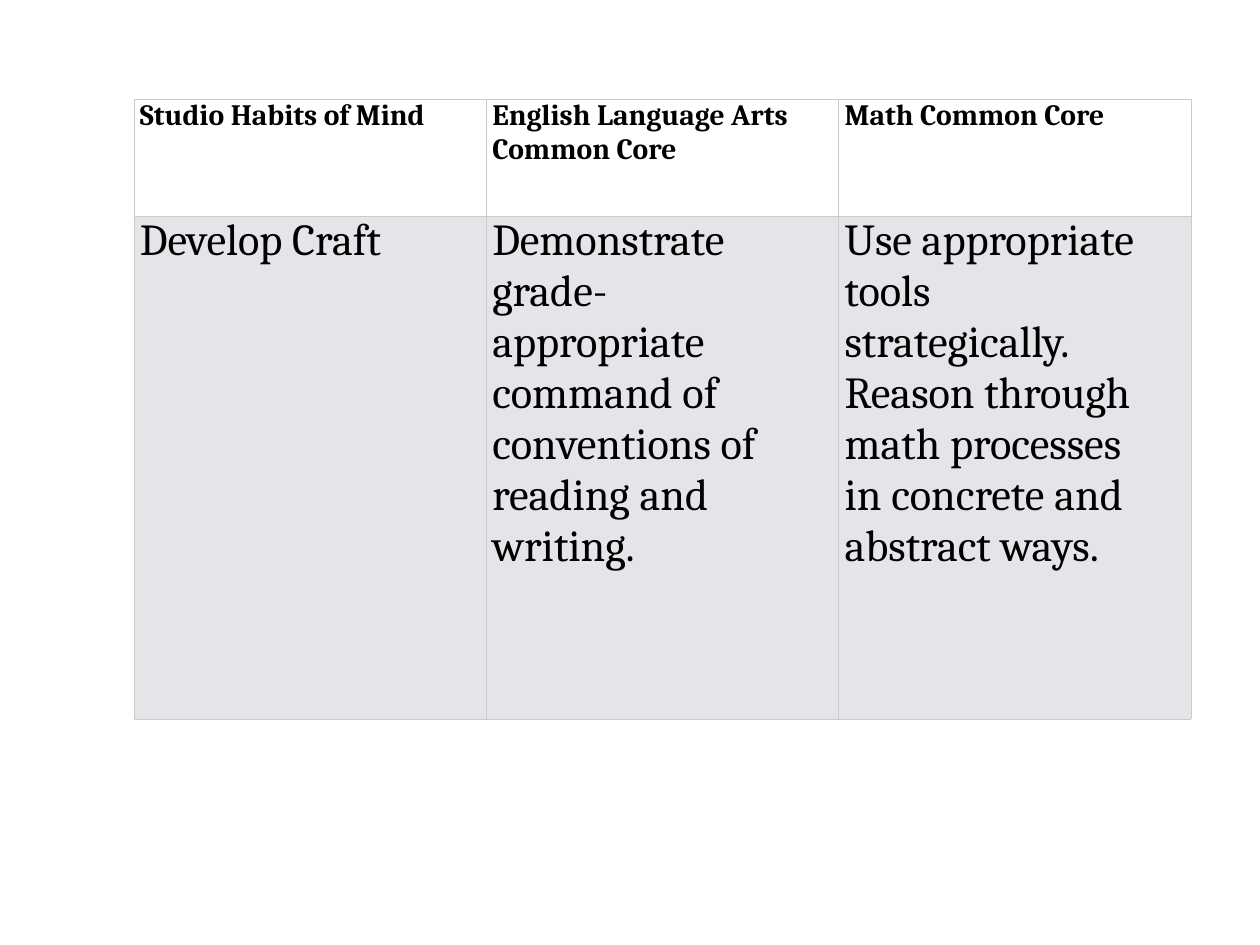
from lxml import etree
from pptx import Presentation
from pptx.dml.color import RGBColor
from pptx.oxml import ns
from pptx.util import Inches, Pt

BLACK = RGBColor(0x00, 0x00, 0x00)
WHITE = RGBColor(0xFF, 0xFF, 0xFF)
PALE_GRAY = RGBColor(0xE3, 0xE5, 0xE8)
BORDER_GRAY = RGBColor(0xCB, 0xCB, 0xCB)

headings = ["Studio Habits of Mind", "English Language Arts Common Core", "Math Common Core"]
standards = [
    "Develop Craft",
    "Demonstrate grade-appropriate command of conventions of reading and writing.",
    "Use appropriate tools strategically. Reason through math processes "
    "in concrete and abstract ways.",
]
# Each row: texts, height, right margin, font size, bold, fill
rows = [
    (headings, 1.32, 0.07, 24, True, WHITE),
    (standards, 5.68, 0.35, 36, False, PALE_GRAY),
]
table_width = 11.93


def add_borders(cell):
    properties = cell._tc.get_or_add_tcPr()
    for position, side in enumerate(("lnL", "lnR", "lnT", "lnB")):
        line = etree.Element(ns.qn(f"a:{side}"), w=str(Pt(0.5)))
        fill = etree.SubElement(line, ns.qn("a:solidFill"))
        etree.SubElement(fill, ns.qn("a:srgbClr"), val=str(BORDER_GRAY))
        properties.insert(position, line)


presentation = Presentation()
presentation.slide_width = Inches(14.22)
presentation.slide_height = Inches(10.67)
slide = presentation.slides.add_slide(presentation.slide_layouts[6])

# Table of studio habits beside the matching standards
habits = slide.shapes.add_table(
    len(rows), len(headings), Inches(1.51), Inches(1.12), Inches(table_width), Inches(7)
).table
for column in habits.columns:
    column.width = Inches(table_width / len(headings))

for row, (texts, height, right_margin, size, bold, fill) in enumerate(rows):
    habits.rows[row].height = Inches(height)
    for column, wording in enumerate(texts):
        cell = habits.cell(row, column)
        cell.margin_left = Inches(0.07)
        cell.margin_right = Inches(right_margin)
        cell.margin_top = cell.margin_bottom = Inches(0)
        cell.fill.solid()
        cell.fill.fore_color.rgb = fill
        add_borders(cell)
        run = cell.text_frame.paragraphs[0].add_run()
        run.text = wording
        run.font.name = "Cambria"
        run.font.size = Pt(size)
        run.font.bold = bold
        run.font.color.rgb = BLACK

presentation.save("out.pptx")
